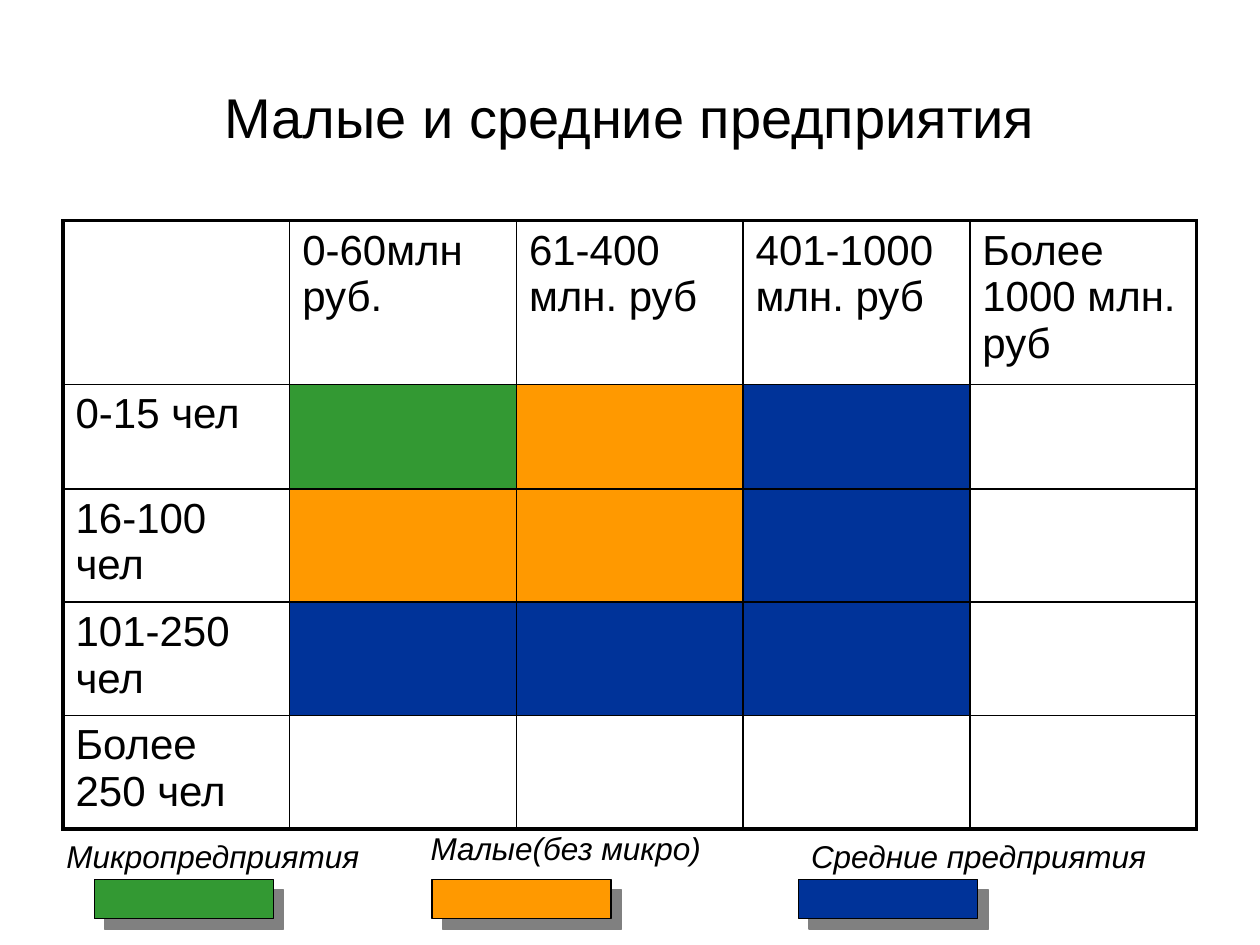
from lxml import etree
from pptx import Presentation
from pptx.dml.color import RGBColor
from pptx.enum import shapes, text
from pptx.oxml import ns
from pptx.util import Cm, Pt

COLORS = {"ink": "000000", "micro": "339933", "small": "FF9900",
          "medium": "003399", "shadow": "808080"}
FONT = "Arial"

HEADERS = ["", "0-60млн руб.", "61-400 млн. руб", "401-1000 млн. руб",
           "Более 1000 млн. руб"]
ROWS = [
    ("0-15 чел", ["micro", "small", "medium", None]),
    ("16-100 чел", ["small", "small", "medium", None]),
    ("101-250 чел", ["medium", "medium", "medium", None]),
    ("Более 250 чел", [None] * 4),
]
ROW_HEIGHTS = [3.07, 2.1, 2.14, 2.14, 2.14]

# label, category, label offset (x, y) and width, swatch x
LEGEND = [
    ("Микропредприятия", "micro", (0, 0.15), 6.43, 0.81),
    ("Малые(без микро)", "small", (7.34, 0), 5.97, 7.62),
    ("Средние предприятия", "medium", (15.01, 0.15), 7.29, 15.01),
]


def rgb(name):
    return RGBColor.from_string(COLORS[name])


def write(tf, content, size, italic=False):
    tf.text = content
    font = tf.paragraphs[0].runs[0].font
    font.name, font.size, font.italic = FONT, Pt(size), italic
    font.color.rgb = rgb("ink")


def add_title(slide, x, y, w, h):
    tf = slide.shapes.add_textbox(Cm(x), Cm(y), Cm(w), Cm(h)).text_frame
    tf.word_wrap = True
    tf.vertical_anchor = text.MSO_ANCHOR.MIDDLE
    write(tf, "Малые и средние предприятия", 32)
    tf.paragraphs[0].alignment = text.PP_ALIGN.CENTER


def set_border(cell, side, width):
    tc_pr = cell._tc.get_or_add_tcPr()
    ln = etree.SubElement(tc_pr, ns.qn(f"a:ln{side}"), w=str(Pt(width)))
    fill = etree.SubElement(ln, ns.qn("a:solidFill"))
    etree.SubElement(fill, ns.qn("a:srgbClr"), val=COLORS["ink"])


def add_size_table(slide, x, y, w):
    """Grid of revenue by headcount, thick outside and thin inside."""
    n_rows, n_cols = len(ROWS) + 1, len(HEADERS)
    table = slide.shapes.add_table(n_rows, n_cols, Cm(x), Cm(y), Cm(w),
                                   Cm(sum(ROW_HEIGHTS))).table
    table.first_row = table.horz_banding = False
    for col in table.columns:
        col.width = Cm(w / n_cols)
    for row, height in zip(table.rows, ROW_HEIGHTS):
        row.height = Cm(height)

    labels = [HEADERS] + [[name] + [""] * (n_cols - 1) for name, _ in ROWS]
    fills = [[None] * n_cols] + [[None] + cats for _, cats in ROWS]
    for i in range(n_rows):
        for j in range(n_cols):
            cell = table.cell(i, j)
            outer = {"L": j == 0, "R": j == n_cols - 1,
                     "T": i == 0, "B": i == n_rows - 1}
            for side, is_outer in outer.items():
                set_border(cell, side, 2.25 if is_outer else 1)
            if fills[i][j]:
                cell.fill.solid()
                cell.fill.fore_color.rgb = rgb(fills[i][j])
            else:
                cell.fill.background()
            if labels[i][j]:
                write(cell.text_frame, labels[i][j], 24)


def add_swatch(slide, category, x, y, w, h):
    sp = slide.shapes.add_shape(shapes.MSO_SHAPE.RECTANGLE,
                                Cm(x), Cm(y), Cm(w), Cm(h))
    sp.fill.solid()
    sp.fill.fore_color.rgb = rgb(category)
    sp.line.color.rgb = rgb("ink")
    sp.line.width = Pt(0.75)
    sp.shadow.inherit = False
    effects = sp._element.spPr.find(ns.qn("a:effectLst"))
    shadow = etree.SubElement(effects, ns.qn("a:outerShdw"), blurRad="0",
                              dist=str(Pt(8.5)), dir=str(45 * 60000),
                              algn="ctr", rotWithShape="0")
    etree.SubElement(shadow, ns.qn("a:srgbClr"), val=COLORS["shadow"])


def add_legend(slide, x, y):
    for label, category, (dx, dy), width, swatch_dx in LEGEND:
        add_swatch(slide, category, x + swatch_dx, y + 1.14, 3.61, 0.79)
        tf = slide.shapes.add_textbox(Cm(x + dx), Cm(y + dy),
                                      Cm(width), Cm(1.02)).text_frame
        tf.word_wrap = False
        tf.auto_size = text.MSO_AUTO_SIZE.SHAPE_TO_FIT_TEXT
        write(tf, label, 18, italic=True)


def main():
    prs = Presentation()
    prs.slide_width, prs.slide_height = Cm(25.4), Cm(19.05)
    slide = prs.slides.add_slide(prs.slide_layouts[6])
    add_title(slide, 1.27, 0.76, 22.86, 3.18)
    add_size_table(slide, 1.27, 4.45, 22.85)
    add_legend(slide, 1.09, 16.59)
    prs.save("out.pptx")


if __name__ == "__main__":
    main()
